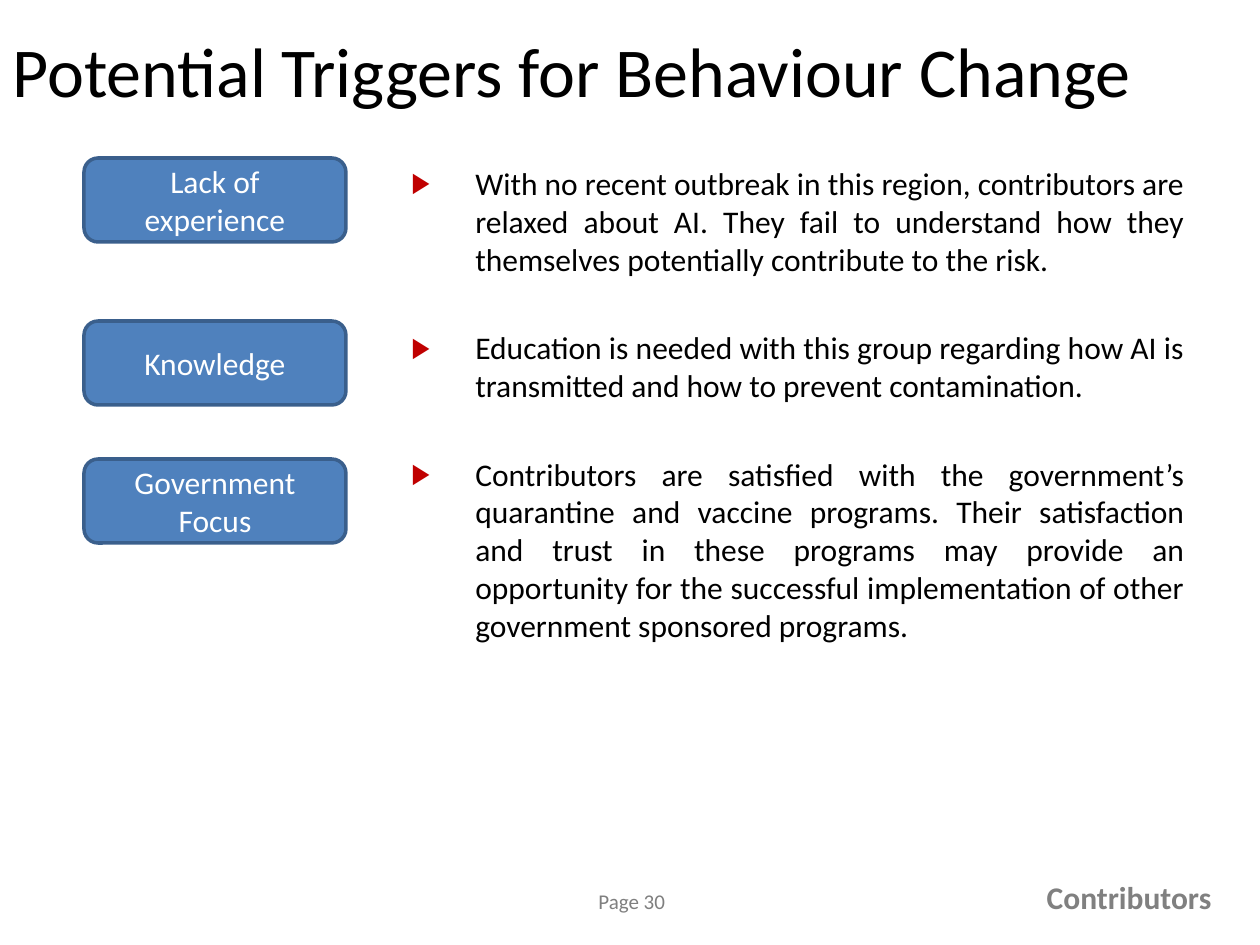
import pptx
import pptx.dml.color
import pptx.enum.shapes
import pptx.enum.text
import pptx.oxml
import pptx.oxml.ns
import pptx.util
from dataclasses import dataclass

ALIGN = pptx.enum.text.PP_ALIGN
ANCHOR = pptx.enum.text.MSO_ANCHOR
EMU_PER_PX = 914400 // 126


def px(*lengths):
    return [pptx.util.Emu(n * EMU_PER_PX) for n in lengths]


def rgb(color):
    return pptx.dml.color.RGBColor.from_string(color)


@dataclass(frozen=True)
class Theme:
    font: str = "Calibri"
    text: str = "000000"
    page: str = "7F7F7F"
    section: str = "808080"
    box_fill: str = "4F81BD"
    box_line: str = "3A5F8C"
    box_text: str = "FFFFFF"
    bullet: str = "C00000"
    title_size: int = 40
    body_size: int = 18
    page_size: int = 12


def write(p, text, *, theme, size, color, bold=False, align=ALIGN.LEFT, before=0):
    p.alignment = align
    p.space_before = pptx.util.Pt(before)
    r = p.add_run()
    r.text = text
    r.font.name = theme.font
    r.font.size = pptx.util.Pt(size)
    r.font.bold = bold
    r.font.color.rgb = rgb(color)


def add_bullet(p, color, indent):
    """Give the paragraph a hanging triangle bullet."""
    pPr = p._p.get_or_add_pPr()
    pPr.set("marL", str(indent))
    pPr.set("indent", str(-indent))
    ns = pptx.oxml.ns.nsdecls("a")
    for xml in (
        f'<a:buClr {ns}><a:srgbClr val="{color}"/></a:buClr>',
        f'<a:buSzPct {ns} val="90000"/>',
        f'<a:buFont {ns} typeface="Arial"/>',
        f'<a:buChar {ns} char="▶"/>',
    ):
        pPr.append(pptx.oxml.parse_xml(xml))


class SlideBuilder:
    """Holds the theme and the current slide."""

    def __init__(self, slide, theme):
        self.slide = slide
        self.theme = theme

    def frame(self, box, wrap=True, anchor=ANCHOR.TOP):
        tf = self.slide.shapes.add_textbox(*px(*box)).text_frame
        tf.word_wrap = wrap
        tf.vertical_anchor = anchor
        return tf

    def label(self, box, text, *, wrap=False, anchor=ANCHOR.TOP, **style):
        tf = self.frame(box, wrap, anchor)
        write(tf.paragraphs[0], text, theme=self.theme, **style)

    def trigger(self, box, text):
        t = self.theme
        sp = self.slide.shapes.add_shape(
            pptx.enum.shapes.MSO_SHAPE.ROUNDED_RECTANGLE, *px(*box))
        sp.shadow.inherit = False
        sp.fill.solid()
        sp.fill.fore_color.rgb = rgb(t.box_fill)
        sp.line.color.rgb = rgb(t.box_line)
        sp.line.width = pptx.util.Pt(2)
        tf = sp.text_frame
        tf.word_wrap = True
        tf.vertical_anchor = ANCHOR.MIDDLE
        write(tf.paragraphs[0], text, theme=t, size=t.body_size,
              color=t.box_text, align=ALIGN.CENTER)

    def bullets(self, box, texts, first_gap, gap, indent):
        t = self.theme
        tf = self.frame(box)
        for i, text in enumerate(texts):
            p = tf.add_paragraph() if i else tf.paragraphs[0]
            write(p, text, theme=t, size=t.body_size, color=t.text,
                  align=ALIGN.JUSTIFY, before=gap if i else first_gap)
            add_bullet(p, t.bullet, px(indent)[0])


TRIGGERS = [
    (158, "Lack of experience",
     "With no recent outbreak in this region, contributors are relaxed about AI. "
     "They fail to understand how they themselves potentially contribute to the risk."),
    (321, "Knowledge",
     "Education is needed with this group regarding how AI is transmitted and how "
     "to prevent contamination."),
    (459, "Government Focus",
     "Contributors are satisfied with the government’s quarantine and vaccine "
     "programs. Their satisfaction and trust in these programs may provide an "
     "opportunity for the successful implementation of other government sponsored "
     "programs."),
]


def main():
    prs = pptx.Presentation()
    prs.slide_width, prs.slide_height = px(1260, 945)
    theme = Theme()
    s = SlideBuilder(prs.slides.add_slide(prs.slide_layouts[6]), theme)

    s.label((586, 882, 97, 38), "Page 30", size=theme.page_size, color=theme.page)
    s.label((0, 21, 1281, 98), "Potential Triggers for Behaviour Change", wrap=True,
            anchor=ANCHOR.MIDDLE, size=theme.title_size, color=theme.text)
    s.label((1032, 872, 192, 50), "Contributors", size=theme.body_size,
            color=theme.section, bold=True, align=ALIGN.RIGHT)
    for top, name, _ in TRIGGERS:
        s.trigger((84, top, 262, 84), name)
    s.bullets((399, 158, 798, 588), [text for _, _, text in TRIGGERS],
              first_gap=4, gap=29, indent=64)

    prs.save("out.pptx")


if __name__ == "__main__":
    main()
